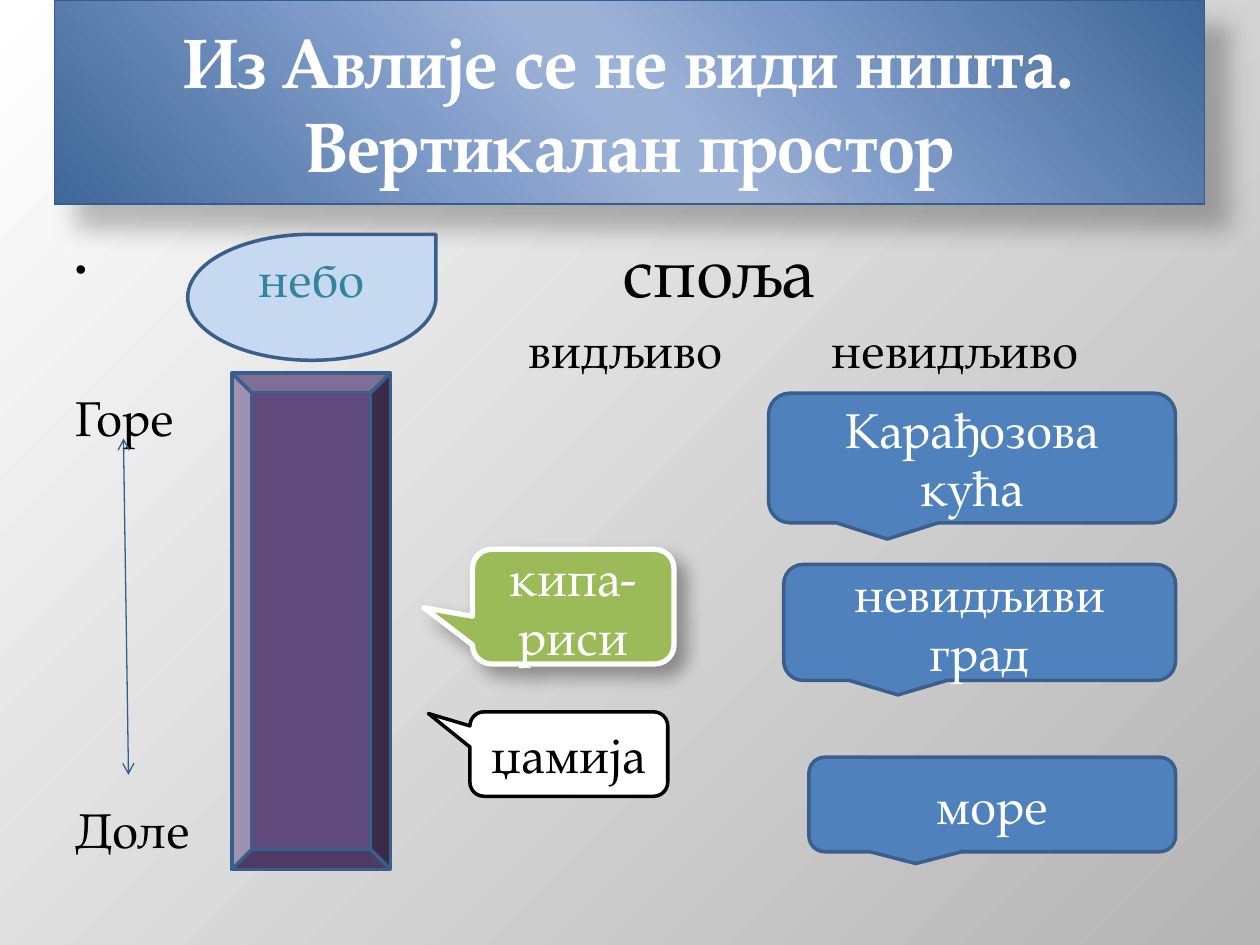
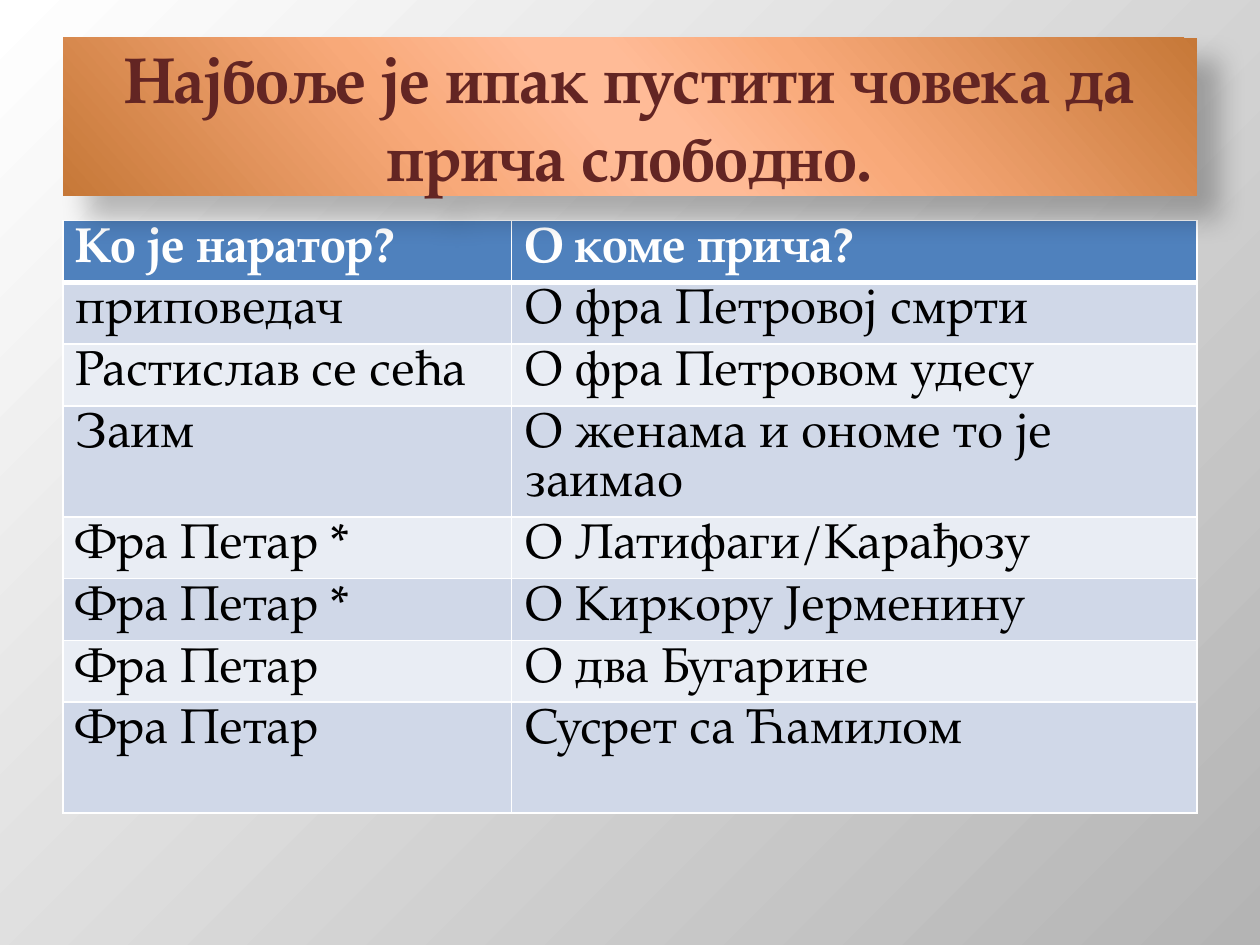
"""Builds two slides on the vertical space and the narrators of a novel."""
import pptx
import pptx.dml.color
import pptx.enum.shapes
import pptx.enum.text
import pptx.oxml
import pptx.oxml.ns
import pptx.util

WIDTH, HEIGHT = 10, 7.5
SIDE = WIDTH / 20
FONT = "TeX Gyre Pagella"
TEXT_SIZE, HEADING_SIZE = 28, 40
COLORS = {
    "white": "FFFFFF", "black": "000000", "gray": "B4B4B4",
    "blue": "4F81BD", "edge": "3A5F8C", "line": "355D8D",
    "purple": "604A7B", "sky": "C6D9F1", "teal": "31859C",
    "green": "9BBB59", "maroon": "632523",
    "band_dark": "D0D8E8", "band_light": "E9EDF4",
    "steel": "3F6797", "steel_mid": "7D9AC8", "steel_light": "9CB1D6",
    "copper": "C67838", "copper_mid": "F8A979", "copper_light": "FFBB97",
}
PAGE_STOPS = [(0, "white"), (100, "gray")]
BAND_PLACES = (0, 33, 47, 53, 68, 100)
FROM_CORNER = '<a:path path="circle"><a:fillToRect r="100000" b="100000"/></a:path>'
DIAGONAL = '<a:lin ang="8340000" scaled="0"/>'
BAND_SHADOW = {"opacity": 26, "blur": 15, "distance": 18}
CALLOUT_SHADOW = {"opacity": 35, "blur": 10.2, "distance": 8}

SPACE_TITLE = {
    "text": "Из Авлије се не види ништа. Вертикалан простор",
    "place": (0.43, 0, 9.13, 1.62), "shades": ("steel", "steel_mid", "steel_light"),
    "color": "white", "size": HEADING_SIZE, "edge": "line",
}
STORY_TITLE = {
    "text": "Најбоље је ипак пустити човека да прича слободно.",
    "place": (SIDE, 0.3, WIDTH - 2 * SIDE, 1.25), "shades": ("copper", "copper_mid", "copper_light"),
    "color": "maroon", "size": 36.9, "edge": None,
}

OUTSIDE_HEADING = "споља"
OUTSIDE_TOP, OUTSIDE_INDENT = 1.76, 4.34
COLUMN_LABELS_TOP = 2.49
COLUMN_LABELS = [("видљиво", 4.1), ("невидљиво", 6.5)]
LEVEL_LABELS = [("Горе", 3.03), ("Доле", 6.3)]
LABEL_WIDTH = 2.5
SKY = "небо"
SKY_PLACE, SKY_BOTTOM_MARGIN = (1.49, 1.86, 1.97, 1), 0.35
WALL_PLACE = (1.84, 2.96, 1.26, 3.94)
ARROW_ENDS = (0.98, 3.48, 1.02, 6.15)

VISIBLE = [
    {"lines": ["кипа-", "риси"], "place": (3.75, 4.36, 1.6, 0.91), "fill": "green", "edge": "white",
     "weight": 3, "color": "white", "tail": (-0.74, 0.01), "shadow": CALLOUT_SHADOW},
    {"lines": ["џамија"], "place": (3.73, 5.65, 1.57, 0.67), "fill": "white", "edge": "black",
     "weight": 2, "color": "black", "tail": (-0.71, -0.48)},
]
INVISIBLE_RIGHT = 9.33
INVISIBLE_STYLE = {"fill": "blue", "edge": "edge", "weight": 2, "color": "white", "side_margin": 0.18}
INVISIBLE = [
    ("Карађозова кућа", 3.12, 3.23, 1.03),
    ("невидљиви град", 4.48, 3.11, 0.92),
    ("море", 6.01, 2.91, 0.75),
]

NARRATORS = [
    ("Ко је наратор?", "О коме прича?"),
    ("приповедач", "О фра Петровој смрти"),
    ("Растислав се сећа", "О фра Петровом удесу"),
    ("Заим", "О женама и ономе то је заимао"),
    ("Фра Петар *", "О Латифаги/Карађозу"),
    ("Фра Петар *", "О Киркору Јерменину"),
    ("Фра Петар", "О два Бугарине"),
    ("Фра Петар", "Сусрет са Ћамилом"),
]
TABLE_TOP = 1.75
COLUMN_WIDTHS = (3.56, 5.44)
ROW_HEIGHT, TALL_ROW_HEIGHT = 0.49, 0.88
TALL_ROWS = (3, 7)


def rgb(name):
    return pptx.dml.color.RGBColor.from_string(COLORS[name])


def inches(lengths):
    return [pptx.util.Inches(length) for length in lengths]


def xml(tag, attributes="", inner=""):
    namespace = pptx.oxml.ns.nsdecls("a")
    return pptx.oxml.parse_xml(f"<a:{tag} {namespace} {attributes}>{inner}</a:{tag}>")


def child(parent, tag):
    return parent.find(pptx.oxml.ns.qn(f"a:{tag}"))


def color_xml(name, inner=""):
    return f'<a:srgbClr val="{COLORS[name]}">{inner}</a:srgbClr>'


def set_gradient(fill, parent, stops, direction):
    fill.solid()
    marks = "".join(f'<a:gs pos="{place * 1000}">{color_xml(name)}</a:gs>' for place, name in stops)
    gradient = xml("gradFill", 'rotWithShape="1"', f"<a:gsLst>{marks}</a:gsLst>{direction}")
    parent.replace(child(parent, "solidFill"), gradient)


def set_line(line, color, weight):
    line.color.rgb = rgb(color)
    line.width = pptx.util.Pt(weight)


def set_shadow(shape, shadow=None):
    shape.shadow.inherit = False
    if shadow:
        blur, distance = pptx.util.Pt(shadow["blur"]), pptx.util.Pt(shadow["distance"])
        attributes = f'blurRad="{blur}" dist="{distance}" dir="2700000" algn="tl" rotWithShape="0"'
        tint = color_xml("black", f'<a:alpha val="{shadow["opacity"] * 1000}"/>')
        child(shape.element.spPr, "effectLst").append(xml("outerShdw", attributes, tint))


def format_paragraph(paragraph, color, size=TEXT_SIZE, bold=False):
    font = paragraph.font
    font.name, font.size, font.bold = FONT, pptx.util.Pt(size), bold
    font.color.rgb = rgb(color)


def write(frame, lines, color, size=TEXT_SIZE, align="CENTER", anchor="MIDDLE", bold=False):
    frame.word_wrap = True
    frame.auto_size = pptx.enum.text.MSO_AUTO_SIZE.NONE
    frame.vertical_anchor = pptx.enum.text.MSO_ANCHOR[anchor]
    for index, line in enumerate(lines):
        paragraph = frame.add_paragraph() if index else frame.paragraphs[0]
        paragraph.text = line
        paragraph.alignment = pptx.enum.text.PP_ALIGN[align]
        format_paragraph(paragraph, color, size, bold)


def add_titled_page(deck, heading):
    page = deck.slides.add_slide(deck.slide_layouts[5])
    title = page.shapes.title
    title.left, title.top, title.width, title.height = inches(heading["place"])
    shades = heading["shades"] + heading["shades"][::-1]
    set_gradient(title.fill, title.element.spPr, zip(BAND_PLACES, shades), DIAGONAL)
    if heading["edge"]:
        set_line(title.line, heading["edge"], 0.75)
    else:
        title.line.fill.background()
    set_shadow(title, BAND_SHADOW)
    write(title.text_frame, [heading["text"]], heading["color"], heading["size"], bold=True)
    return page


def add_shape(page, kind, place, fill, edge="edge", weight=2):
    shape = page.shapes.add_shape(pptx.enum.shapes.MSO_SHAPE[kind], *inches(place))
    shape.fill.solid()
    shape.fill.fore_color.rgb = rgb(fill)
    set_line(shape.line, edge, weight)
    set_shadow(shape)
    return shape


def add_callout(page, lines, place, fill, edge, weight, color, tail=(), shadow=None, side_margin=0.1):
    callout = add_shape(page, "ROUNDED_RECTANGULAR_CALLOUT", place, fill, edge, weight)
    for index, share in enumerate(tail):
        callout.adjustments[index] = share
    set_shadow(callout, shadow)
    frame = callout.text_frame
    frame.margin_left = frame.margin_right = pptx.util.Inches(side_margin)
    write(frame, lines, color)


def add_label(page, text, left, top, width=LABEL_WIDTH, size=TEXT_SIZE):
    box = page.shapes.add_textbox(*inches((left, top, width, size / 45)))
    write(box.text_frame, [text], "black", size, "LEFT", "TOP")
    return box.text_frame.paragraphs[0]


def add_outside_heading(page):
    heading = add_label(page, OUTSIDE_HEADING, SIDE, OUTSIDE_TOP, WIDTH - 2 * SIDE, HEADING_SIZE)
    properties = heading._p.get_or_add_pPr()
    indent = pptx.util.Inches(OUTSIDE_INDENT)
    properties.set("marL", str(indent))
    properties.set("indent", str(-indent))
    bullet = [("buSzPct", 'val="45000"'), ("buFont", 'typeface="Arial"'), ("buChar", 'char="•"')]
    for index, (tag, attributes) in enumerate(bullet):
        properties.insert(index, xml(tag, attributes))


def add_height_arrow(page):
    straight = pptx.enum.shapes.MSO_CONNECTOR.STRAIGHT
    arrow = page.shapes.add_connector(straight, *inches(ARROW_ENDS))
    set_line(arrow.line, "line", 0.75)
    properties = arrow.element.spPr
    for end in ("headEnd", "tailEnd"):
        child(properties, "ln").append(xml(end, 'type="arrow"'))
    properties.append(xml("effectLst"))


def build_space_page(deck):
    page = add_titled_page(deck, SPACE_TITLE)
    add_outside_heading(page)
    for text, left in COLUMN_LABELS:
        add_label(page, text, left, COLUMN_LABELS_TOP)
    for text, top in LEVEL_LABELS:
        add_label(page, text, SIDE, top)
    add_shape(page, "BEVEL", WALL_PLACE, "purple")
    sky = add_shape(page, "TEAR", SKY_PLACE, "sky")
    sky.text_frame.margin_bottom = pptx.util.Inches(SKY_BOTTOM_MARGIN)
    write(sky.text_frame, [SKY], "teal")
    add_height_arrow(page)
    for callout in VISIBLE:
        add_callout(page, **callout)
    for text, top, width, height in INVISIBLE:
        place = (INVISIBLE_RIGHT - width, top, width, height)
        add_callout(page, [text], place, **INVISIBLE_STYLE)


def set_borders(cell, weights):
    properties = cell._tc.get_or_add_tcPr()
    paint = f'<a:solidFill>{color_xml("white")}</a:solidFill>'
    for side, weight in weights.items():
        properties.append(xml(f"ln{side}", f'w="{pptx.util.Pt(weight)}"', paint))


def fill_row(row, texts, fill, color, is_header):
    for cell, text in zip(row.cells, texts):
        set_borders(cell, {"L": 1, "R": 1, "T": 1, "B": 3 if is_header else 1})
        cell.fill.solid()
        cell.fill.fore_color.rgb = rgb(fill)
        cell.text = text
        format_paragraph(cell.text_frame.paragraphs[0], color, bold=is_header)


def build_story_page(deck):
    page = add_titled_page(deck, STORY_TITLE)
    heights = [TALL_ROW_HEIGHT if row in TALL_ROWS else ROW_HEIGHT for row in range(len(NARRATORS))]
    place = inches((SIDE, TABLE_TOP, sum(COLUMN_WIDTHS), sum(heights)))
    table = page.shapes.add_table(len(NARRATORS), len(COLUMN_WIDTHS), *place).table
    for column, width in zip(table.columns, inches(COLUMN_WIDTHS)):
        column.width = width
    for index, (row, height) in enumerate(zip(table.rows, inches(heights))):
        row.height = height
        if index == 0:
            fill_row(row, NARRATORS[index], "blue", "white", True)
        else:
            fill_row(row, NARRATORS[index], "band_dark" if index % 2 else "band_light", "black", False)
    title = page.shapes.title.element
    title.getparent().append(title)


def main():
    deck = pptx.Presentation()
    deck.slide_width, deck.slide_height = inches((WIDTH, HEIGHT))
    master = deck.slide_master
    background = master.background.fill
    background.solid()
    set_gradient(background, master.element.cSld.bg.bgPr, PAGE_STOPS, FROM_CORNER)
    build_space_page(deck)
    build_story_page(deck)
    deck.save("out.pptx")


if __name__ == "__main__":
    main()
